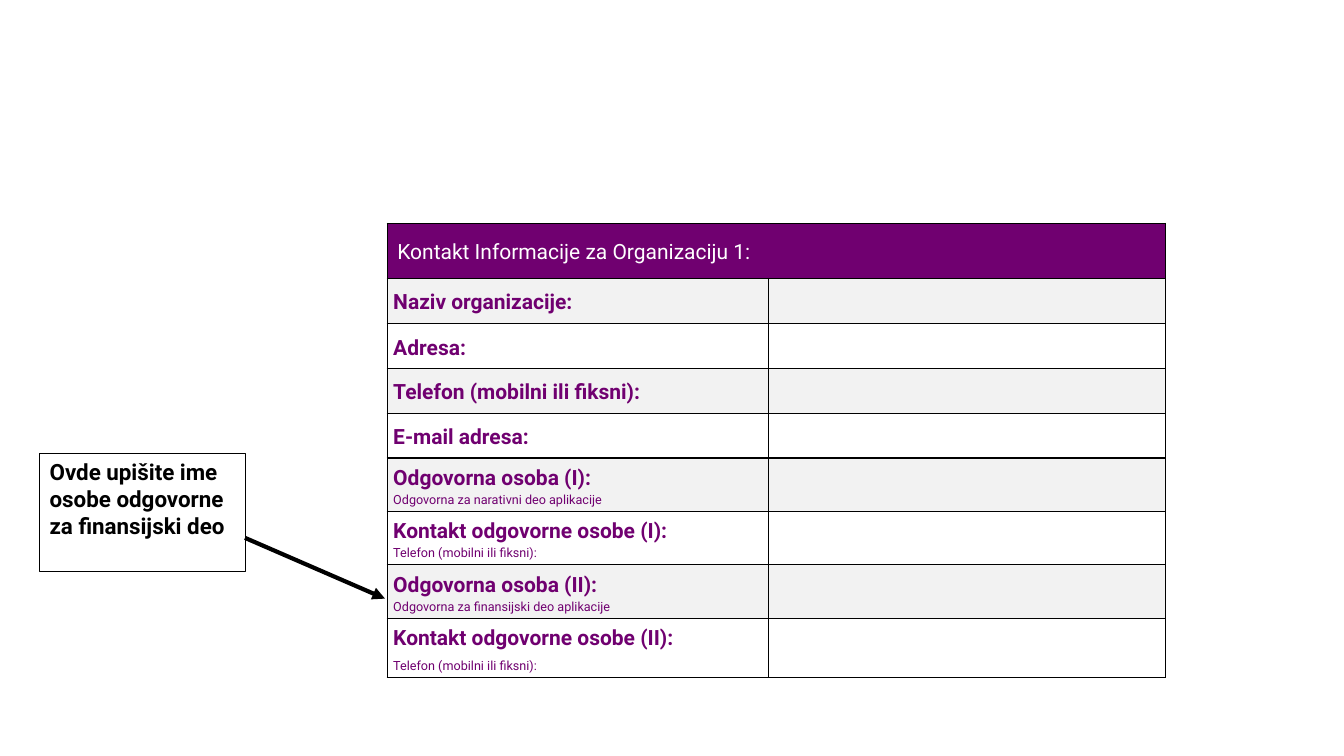
"""Build the contact information slide with its table and callout."""
from lxml import etree
from pptx import Presentation
from pptx.dml.color import RGBColor
from pptx.enum.shapes import MSO_CONNECTOR
from pptx.enum.text import MSO_ANCHOR
from pptx.oxml.ns import qn
from pptx.util import Pt

STRAIGHT = MSO_CONNECTOR.STRAIGHT
MIDDLE = MSO_ANCHOR.MIDDLE

HEADING = "Kontakt Informacije za Organizaciju 1:"
PHONE = "Telefon (mobilni ili fiksni):"
FIELDS = [
    ("Naziv organizacije:",),
    ("Adresa:",),
    (PHONE,),
    ("E-mail adresa:",),
    ("Odgovorna osoba (I):", "Odgovorna za narativni deo aplikacije"),
    ("Kontakt odgovorne osobe (I):", PHONE),
    ("Odgovorna osoba (II):", "Odgovorna za finansijski deo aplikacije"),
    ("Kontakt odgovorne osobe (II):", PHONE),
]
CALLOUT = "Ovde upišite ime osobe odgovorne za finansijski deo"

THEME = {
    "purple": RGBColor(0x70, 0x00, 0x70),
    "band": RGBColor(0xF2, 0xF2, 0xF2),
    "white": RGBColor(0xFF, 0xFF, 0xFF),
    "black": RGBColor(0x00, 0x00, 0x00),
    "heading": {"name": "Roboto", "size": Pt(15), "bold": False},
    "label": {"name": "Roboto", "size": Pt(15), "bold": True},
    "hint": {"name": "Roboto", "size": Pt(9), "bold": False},
    "callout": {"name": "Roboto", "size": Pt(16), "bold": True},
}

SLIDE_SIZE = (960, 540)
TABLE_ORIGIN = (276.6, 159.6)
COLUMN_WIDTHS = (272.4, 283.4)
ROW_HEIGHTS = [39.2, 32.4] + [32] * 3 + [38.2] * 3 + [42.6]
CALLOUT_BOX = (28.4, 323.8, 147, 84.6)
ARROW_ENDS = (175, 384.2, 275, 427.6)
HEADING_MARGINS = (7.2, 3.6)
FIELD_MARGINS = (4.3, 0)


def write(paragraph, text, style, color, line_spacing=1.15):
    run = paragraph.add_run()
    run.text = text
    for name, value in THEME[style].items():
        setattr(run.font, name, value)
    run.font.color.rgb = THEME[color]
    paragraph.line_spacing = line_spacing


def add_borders(cell):
    properties = cell._tc.get_or_add_tcPr()
    for index, side in enumerate(("lnL", "lnR", "lnT", "lnB")):
        line = etree.Element(qn(f"a:{side}"), w=str(Pt(1)))
        fill = etree.SubElement(line, qn("a:solidFill"))
        etree.SubElement(fill, qn("a:srgbClr"), val=str(THEME["black"]))
        properties.insert(index, line)


def format_cell(cell, color, margins):
    horizontal, vertical = map(Pt, margins)
    settings = {
        "vertical_anchor": MIDDLE,
        "margin_left": horizontal,
        "margin_right": horizontal,
        "margin_top": vertical,
        "margin_bottom": vertical,
    }
    for name, value in settings.items():
        setattr(cell, name, value)
    cell.fill.solid()
    cell.fill.fore_color.rgb = THEME[color]
    add_borders(cell)


def add_contact_table(slide):
    size = (sum(COLUMN_WIDTHS), sum(ROW_HEIGHTS))
    frame = slide.shapes.add_table(
        len(ROW_HEIGHTS), len(COLUMN_WIDTHS), *map(Pt, TABLE_ORIGIN + size))
    table = frame.table
    for column, width in zip(table.columns, COLUMN_WIDTHS):
        column.width = Pt(width)
    for row, height in zip(table.rows, ROW_HEIGHTS):
        row.height = Pt(height)

    for cell in table.rows[0].cells:
        format_cell(cell, "purple", HEADING_MARGINS)
    heading = table.cell(0, 0)
    heading.merge(table.cell(0, 1))
    write(heading.text_frame.paragraphs[0], HEADING, "heading", "white")

    for number, (label, *hints) in enumerate(FIELDS, start=1):
        for cell in table.rows[number].cells:
            format_cell(cell, "band" if number % 2 else "white", FIELD_MARGINS)
        text_frame = table.cell(number, 0).text_frame
        write(text_frame.paragraphs[0], label, "label", "purple")
        hint_spacing = 1.5 if number == len(FIELDS) else 1.15
        for hint in hints:
            write(text_frame.add_paragraph(), hint, "hint", "purple", hint_spacing)


def add_callout(slide):
    box = slide.shapes.add_textbox(*map(Pt, CALLOUT_BOX))
    box.line.color.rgb = THEME["black"]
    box.line.width = Pt(0.75)
    box.text_frame.word_wrap = True
    write(box.text_frame.paragraphs[0], CALLOUT, "callout", "black", 1.0)


def add_arrow(slide):
    arrow = slide.shapes.add_connector(STRAIGHT, *map(Pt, ARROW_ENDS))
    arrow.line.color.rgb = THEME["black"]
    arrow.line.width = Pt(3)
    etree.SubElement(arrow.line._get_or_add_ln(), qn("a:tailEnd"), type="triangle")
    etree.SubElement(arrow._element.spPr, qn("a:effectLst"))


def main():
    presentation = Presentation()
    presentation.slide_width, presentation.slide_height = map(Pt, SLIDE_SIZE)
    slide = presentation.slides.add_slide(presentation.slide_layouts[6])
    add_arrow(slide)
    add_contact_table(slide)
    add_callout(slide)
    presentation.save("out.pptx")


if __name__ == "__main__":
    main()
